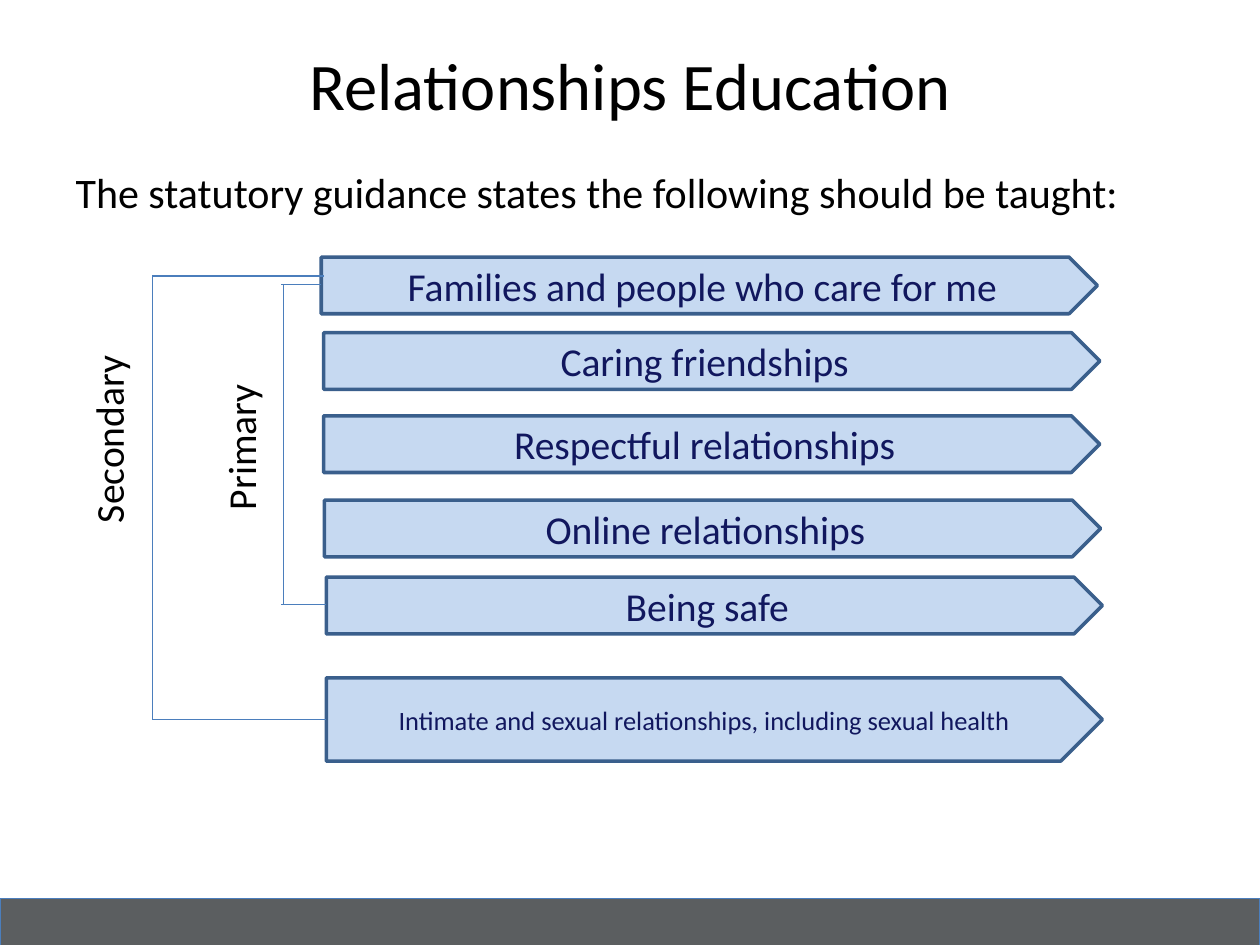
import pptx
import pptx.util
from pptx.dml.color import RGBColor
from pptx.enum.shapes import MSO_CONNECTOR, MSO_SHAPE
from pptx.enum.text import MSO_ANCHOR, MSO_AUTO_SIZE, PP_ALIGN
from pptx.oxml.ns import qn
from lxml import etree

Pt = pptx.util.Pt

# Content
HEADING = "Relationships Education"
INTRO = "The statutory guidance states the following should be taught:"
TOPICS = [  # text, left, top, height, text size
    ("Families and people who care for me", 183.6, 146.9, 32.4, 22.6),
    ("Caring friendships", 185, 190.1, 32.4, 22.6),
    ("Respectful relationships", 185, 237.6, 32.4, 22.6),
    ("Online relationships", 185.4, 285.8, 32.4, 22.6),
    ("Being safe", 186.5, 329.8, 32.4, 22.6),
    ("Intimate and sexual relationships, including sexual health", 186.5, 387.4, 47.5, 15.1),
]
TOPIC_WIDTH = 443.5
PHASES = [  # text, label box, alignment, wraps
    ("Primary", (120.2, 148.3, 41.8, 214.6), PP_ALIGN.CENTER, True),
    ("Secondary", (44.6, 202.3, 41.8, 103.7), PP_ALIGN.LEFT, False),
]
BRACKETS = [  # spine x, arm start x, top y, bottom y, top arm end, bottom arm end
    (162, 160.6, 162.7, 345.6, 183.6, 186.5),
    (87.1, 87.1, 157.7, 411.1, 185, 186.5),
]

FONT = "Calibri"
BLACK = RGBColor(0x00, 0x00, 0x00)
NAVY = RGBColor(0x11, 0x17, 0x5E)
PALE_BLUE = RGBColor(0xC6, 0xD9, 0xF1)
OUTLINE_BLUE = RGBColor(0x3A, 0x5F, 0x8C)
LINE_BLUE = RGBColor(0x4B, 0x7E, 0xBC)
GREY = RGBColor(0x5B, 0x5E, 0x60)


def write(frame, text, size, color, align):
    paragraph = frame.paragraphs[0]
    paragraph.alignment = align
    paragraph.space_before = Pt(0)
    run = paragraph.add_run()
    run.text = text
    run.font.name = FONT
    run.font.size = Pt(size)
    run.font.color.rgb = color
    return paragraph


def fill_placeholder(placeholder, box, text, size, align):
    placeholder.left, placeholder.top, placeholder.width, placeholder.height = map(Pt, box)
    frame = placeholder.text_frame
    frame.auto_size = MSO_AUTO_SIZE.NONE
    frame.vertical_anchor = MSO_ANCHOR.TOP
    return write(frame, text, size, BLACK, align)


def add_block(kind, box, fill, outline, weight):
    block = slide.shapes.add_shape(kind, *map(Pt, box))
    block.shadow.inherit = False
    block.fill.solid()
    block.fill.fore_color.rgb = fill
    block.line.color.rgb = outline
    block.line.width = Pt(weight)
    return block


def add_line(x1, y1, x2, y2):
    line = slide.shapes.add_connector(MSO_CONNECTOR.STRAIGHT, *map(Pt, (x1, y1, x2, y2)))
    line.line.color.rgb = LINE_BLUE
    line.line.width = Pt(0.75)
    etree.SubElement(line._element.spPr, qn("a:effectLst"))


deck = pptx.Presentation()
deck.slide_width, deck.slide_height = Pt(720), Pt(540)
slide = deck.slides.add_slide(deck.slide_layouts[1])

# Footer band
add_block(MSO_SHAPE.RECTANGLE, (0, 513.4, 720, 28), GREY, LINE_BLUE, 0.75)

# Title and introduction
fill_placeholder(slide.shapes.title, (36, 21.6, 648, 90), HEADING, 38, PP_ALIGN.CENTER)
intro = fill_placeholder(slide.placeholders[1], (36, 91.4, 648, 363.6), INTRO, 24, PP_ALIGN.LEFT)
intro_format = intro._p.get_or_add_pPr()
intro_format.set("marL", "0")
intro_format.set("indent", "0")
etree.SubElement(intro_format, qn("a:buNone"))

# Topic arrows
for text, left, top, height, size in TOPICS:
    topic = add_block(MSO_SHAPE.PENTAGON, (left, top, TOPIC_WIDTH, height),
                      PALE_BLUE, OUTLINE_BLUE, 2)
    topic.text_frame.vertical_anchor = MSO_ANCHOR.MIDDLE
    write(topic.text_frame, text, size, NAVY, PP_ALIGN.CENTER)

# Phase labels, reading upwards
for text, box, align, wraps in PHASES:
    frame = slide.shapes.add_textbox(*map(Pt, box)).text_frame
    frame.word_wrap = wraps
    frame.auto_size = MSO_AUTO_SIZE.SHAPE_TO_FIT_TEXT
    frame._txBody.bodyPr.set("vert", "vert270")
    write(frame, text, 22.6, BLACK, align)

# Brackets joining each phase to its topics
for spine, arm, top, bottom, top_end, bottom_end in BRACKETS:
    add_line(top_end, top, arm, top)
    add_line(bottom_end, bottom, arm, bottom)
    add_line(spine, top, spine, bottom)

deck.save("out.pptx")
